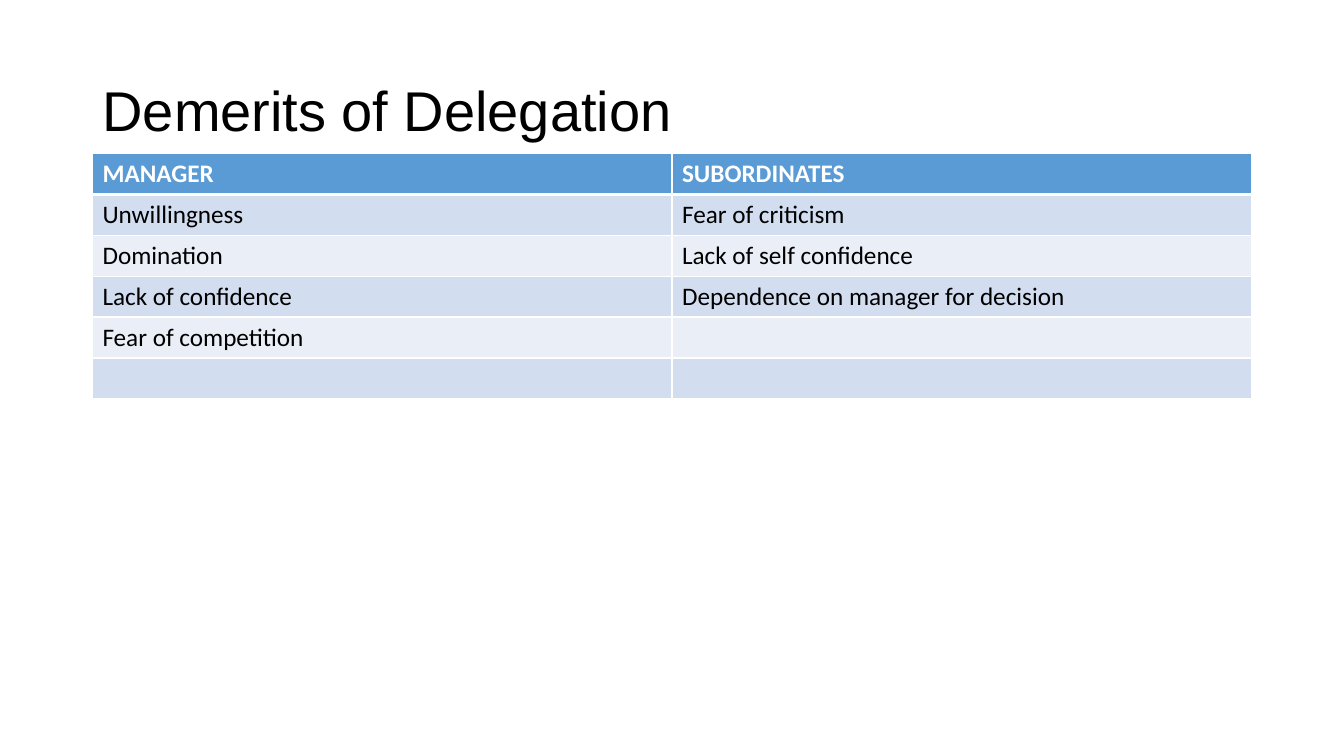
"""Build a slide that lists the demerits of delegation in a two-column table."""
from dataclasses import dataclass

from lxml import etree
from pptx import Presentation
from pptx.dml.color import RGBColor
from pptx.enum.text import MSO_ANCHOR, MSO_AUTO_SIZE, PP_ALIGN
from pptx.oxml.ns import qn
from pptx.util import Cm, Pt

LEFT = PP_ALIGN.LEFT
MIDDLE = MSO_ANCHOR.MIDDLE
NO_AUTOFIT = MSO_AUTO_SIZE.NONE


@dataclass(frozen=True)
class Theme:
    title_font: str = "Arial"
    table_font: str = "Calibri"
    title_size: int = 40
    table_size: int = 18
    ink: str = "000000"
    white: str = "FFFFFF"
    header: str = "5B9BD5"
    bands: tuple = ("EAEFF7", "D2DEEF")


THEME = Theme()


def write(frame, text, *, font, size, color, bold=False, line_spacing=1.0):
    para = frame.paragraphs[0]
    para.alignment = LEFT
    para.line_spacing = line_spacing
    span = para.add_run()
    span.text = text
    span.font.name = font
    span.font.size = Pt(size)
    span.font.bold = bold
    span.font.color.rgb = RGBColor.from_string(color)


def add_border(cell, side, points):
    properties = cell._tc.get_or_add_tcPr()
    line = etree.SubElement(properties, qn(f"a:ln{side}"), w=str(Pt(points)))
    fill = etree.SubElement(line, qn("a:solidFill"))
    etree.SubElement(fill, qn("a:srgbClr"), val=THEME.white)


deck = Presentation()
deck.slide_width = Cm(33.87)
deck.slide_height = Cm(19.05)
page = deck.slides.add_slide(deck.slide_layouts[5])

title = page.shapes.title
title.left, title.top, title.width, title.height = Cm(2.33), Cm(1.01), Cm(29.21), Cm(3.68)
title.text_frame.word_wrap = True
title.text_frame.auto_size = NO_AUTOFIT
title.text_frame.vertical_anchor = MIDDLE
write(title.text_frame, "Demerits of Delegation", font=THEME.title_font,
      size=THEME.title_size, color=THEME.ink, line_spacing=0.9)

demerits = [
    ("MANAGER", "SUBORDINATES"),
    ("Unwillingness", "Fear of criticism"),
    ("Domination", "Lack of self confidence"),
    ("Lack of confidence", "Dependence on manager for decision"),
    ("Fear of competition", ""),
    ("", ""),
]
row_height = Cm(1.03)
table = page.shapes.add_table(len(demerits), 2, Cm(2.33), Cm(3.87), Cm(29.21),
                              row_height * len(demerits)).table

for row_index, entries in enumerate(demerits):
    table.rows[row_index].height = row_height
    is_header = row_index == 0
    for column_index, text in enumerate(entries):
        cell = table.cell(row_index, column_index)
        add_border(cell, "L", 1)
        add_border(cell, "R", 1)
        add_border(cell, "T", 3 if row_index == 1 else 1)
        add_border(cell, "B", 3 if is_header else 1)
        cell.fill.solid()
        cell.fill.fore_color.rgb = RGBColor.from_string(
            THEME.header if is_header else THEME.bands[row_index % 2])
        if text:
            write(cell.text_frame, text, font=THEME.table_font, size=THEME.table_size,
                  color=THEME.white if is_header else THEME.ink, bold=is_header)

deck.save("out.pptx")
